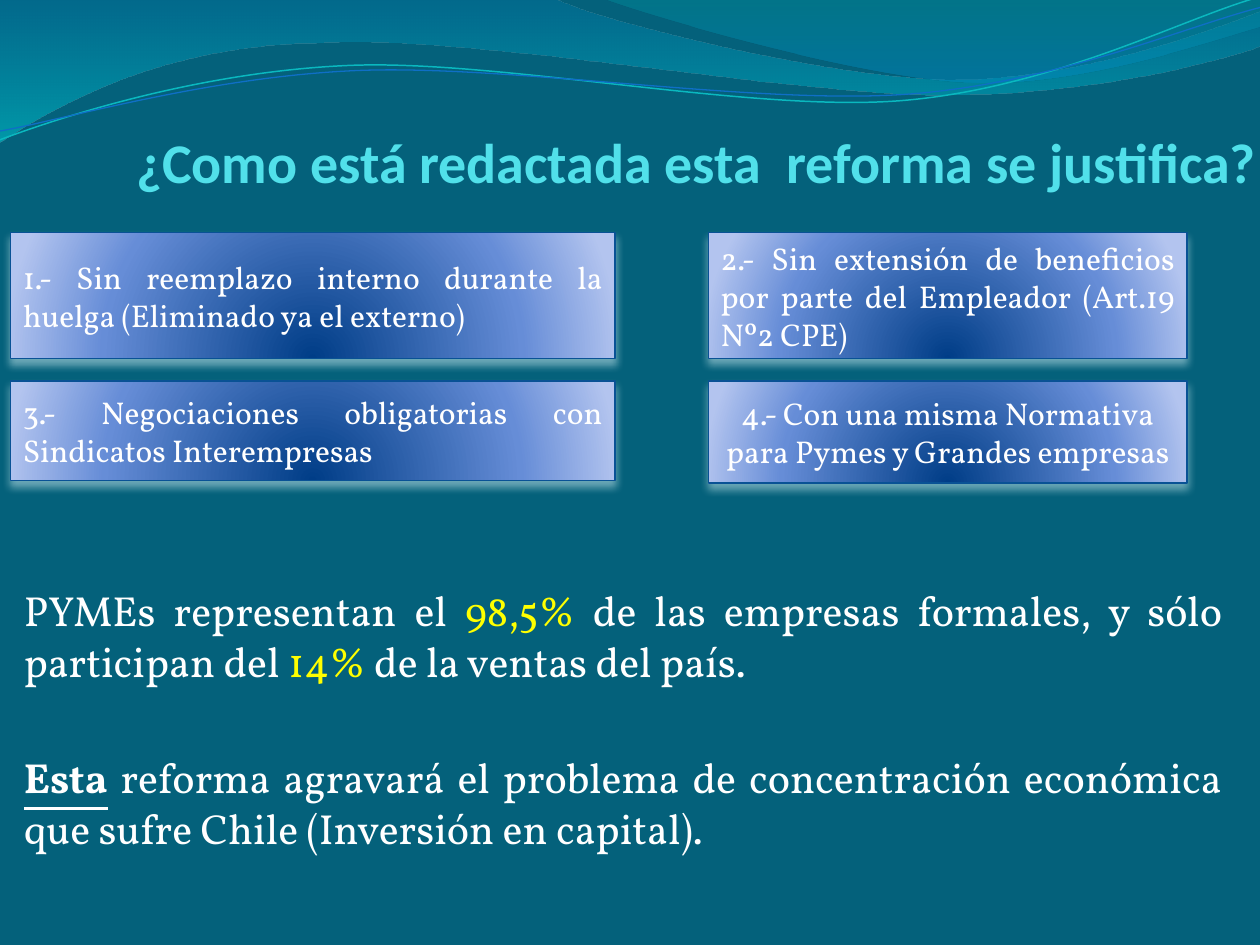
"""Build the slide that questions how the labour reform is justified."""
from dataclasses import dataclass
from math import cos, radians, sin
from typing import Optional

from lxml.etree import SubElement
from pptx import Presentation
from pptx.dml.color import RGBColor
from pptx.enum.shapes import MSO_SHAPE as Preset
from pptx.enum.text import MSO_ANCHOR as Anchor, PP_ALIGN as Align
from pptx.oxml import parse_xml
from pptx.oxml.ns import nsdecls, qn
from pptx.util import Cm, Pt

TEAL = RGBColor(0x04, 0x61, 0x7B)
AQUA = RGBColor(0x51, 0xE0, 0xEA)
WHITE = RGBColor(0xFF, 0xFF, 0xFF)
YELLOW = RGBColor(0xFF, 0xFF, 0x00)
BORDER = RGBColor(0x09, 0x52, 0x95)
GLOW = RGBColor(0xDB, 0xF5, 0xF9)
CYAN_LINE = RGBColor(0x0A, 0xB8, 0xBF)
BLUE_LINE = RGBColor(0x0F, 0x6F, 0xC6)
NAVY = RGBColor(0x00, 0x3D, 0x87)
MID_BLUE = RGBColor(0x66, 0x8D, 0xD7)
PALE_BLUE = RGBColor(0xB3, 0xC4, 0xEF)
WAVE_BLUE = RGBColor(0x00, 0x74, 0xA1)
WAVE_CYAN = RGBColor(0x00, 0xC6, 0xCF)
CREST_GREEN = RGBColor(0x00, 0xA1, 0xA9)
CREST_BLUE = RGBColor(0x00, 0x8B, 0xBF)

DOWNWARD = '<a:lin ang="5400000" scaled="1"/>'
FROM_BELOW = ('<a:path path="circle"><a:fillToRect l="50000" t="130000" '
              'r="50000" b="-30000"/></a:path>')
WAVE_UNIT = Cm(2.54) / 1000
TILT = -2.7
BODY_FONT = "Vollkorn"


@dataclass(frozen=True)
class Stop:
    position: int
    color: RGBColor
    opacity: int = 100


@dataclass(frozen=True)
class Wave:
    """Control points in hundredths of an inch, one or three to a segment."""
    start: tuple
    segments: tuple
    stops: tuple = ()
    line_color: Optional[RGBColor] = None
    line_width: float = 0
    pivot: Optional[tuple] = None


@dataclass(frozen=True)
class Card:
    column: tuple
    top: float
    height: float
    text: str
    align: Align = Align.JUSTIFY


@dataclass(frozen=True)
class Span:
    text: str
    color: RGBColor = WHITE
    bold: bool = False
    underline: bool = False


WAVES = (
    Wave((0, -1), (
        ((440, -1),),
        ((476, 17), (664, 63), (758, 63)),
        ((853, 63), (958, 26), (1000, 9)),
        ((1001, 36),),
        ((983, 44), (870, 76), (746, 75)),
        ((622, 75), (382, 28), (257, 34)),
        ((129, 35), (46, 83), (-1, 113)),
        ((0, -1),),
    ), stops=(Stop(0, WAVE_BLUE, 45), Stop(100, WAVE_CYAN, 55))),
    Wave((479, -1), (
        ((509, 11), (682, 62), (769, 65)),
        ((856, 69), (961, 32), (1000, 21)),
        ((1000, 0),),
        ((479, -1),),
    ), stops=(Stop(0, CREST_GREEN, 30), Stop(80, CREST_BLUE, 45))),
    Wave((0, 111), (
        ((48, 93), (158, 57), (277, 52)),
        ((395, 47), (593, 89), (713, 80)),
        ((833, 71), (938, 15), (998, -2)),
    ), line_color=CYAN_LINE, line_width=0.85, pivot=(499, 57.5)),
    Wave((0, 104), (
        ((47, 96), (164, 61), (283, 56)),
        ((403, 51), (597, 83), (717, 75)),
        ((836, 67), (941, 21), (1000, 6)),
    ), line_color=BLUE_LINE, line_width=0.75, pivot=(499.5, 59)),
)

LEFT_COLUMN, RIGHT_COLUMN = (0.21, 12.19), (14.28, 9.65)
UPPER_ROW, LOWER_ROW = 4.69, 7.68
CARDS = (
    Card(LEFT_COLUMN, UPPER_ROW, 2.54,
         "1.- Sin reemplazo interno durante la huelga (Eliminado ya el externo) "),
    Card(RIGHT_COLUMN, UPPER_ROW, 2.54,
         "2.- Sin extensión de beneficios por parte del Empleador (Art.19 Nº2 CPE)"),
    Card(LEFT_COLUMN, LOWER_ROW, 2.01,
         "3.- Negociaciones obligatorias con Sindicatos Interempresas"),
    Card(RIGHT_COLUMN, LOWER_ROW, 2.06,
         "4.- Con una misma Normativa para Pymes y Grandes empresas", Align.CENTER),
)
CARD_STOPS = (Stop(0, NAVY), Stop(68, MID_BLUE), Stop(100, PALE_BLUE))

TITLE = Span("¿Como está redactada esta  reforma se justifica?", AQUA, bold=True)
FIGURES = (
    Span("PYMEs representan el "),
    Span("98,5% ", YELLOW),
    Span("de las empresas formales, y sólo participan del "),
    Span("14% ", YELLOW),
    Span("de la ventas del país."),
)
CONCLUSION = (
    Span("Esta", bold=True, underline=True),
    Span(" reforma agravará el problema de concentración económica que sufre "
         "Chile (Inversión en capital)."),
)


def set_all(target: object, values: dict) -> None:
    for name, value in values.items():
        setattr(target, name, value)


def fill_gradient(shape, stops: tuple, direction: str) -> None:
    shape.fill.solid()
    marks = "".join(
        f'<a:gs pos="{stop.position * 1000}"><a:srgbClr val="{stop.color}">'
        f'<a:alpha val="{stop.opacity * 1000}"/></a:srgbClr></a:gs>' for stop in stops)
    gradient = parse_xml(f'<a:gradFill {nsdecls("a")} rotWithShape="1">'
                         f'<a:gsLst>{marks}</a:gsLst>{direction}</a:gradFill>')
    properties = shape.element.spPr
    properties.replace(properties.find(qn("a:solidFill")), gradient)


def add_glow(shape) -> None:
    shape.shadow.inherit = False
    shape.element.spPr.find(qn("a:effectLst")).append(parse_xml(
        f'<a:outerShdw {nsdecls("a")} blurRad="{Pt(4.5)}" dist="{Pt(3)}" dir="5400000" '
        f'rotWithShape="0"><a:srgbClr val="{GLOW}"><a:alpha val="48000"/></a:srgbClr>'
        '</a:outerShdw>'))


def level(point: tuple, pivot: Optional[tuple]) -> tuple:
    """Undo the tilt of a point and return it in thousandths of an inch."""
    x, y = point
    if pivot:
        angle, dx, dy = radians(-TILT), x - pivot[0], y - pivot[1]
        x = pivot[0] + dx * cos(angle) - dy * sin(angle)
        y = pivot[1] + dx * sin(angle) + dy * cos(angle)
    return 10 * x, 10 * y


def bend(shape, segments: tuple) -> None:
    """Join each three control points of an outline into one curve."""
    lines = iter(list(shape.element.iter(qn("a:lnTo"))))
    for segment in segments:
        steps = [next(lines) for _ in segment]
        if len(steps) == 3:
            curve = SubElement(steps[0].getparent(), qn("a:cubicBezTo"))
            steps[0].addprevious(curve)
            for step in steps:
                curve.append(step[0])
                step.getparent().remove(step)


def add_wave(page, wave: Wave) -> None:
    points = [level(point, wave.pivot) for segment in wave.segments for point in segment]
    builder = page.shapes.build_freeform(*level(wave.start, wave.pivot), scale=WAVE_UNIT)
    builder.add_line_segments(points, close=bool(wave.stops))
    shape = builder.convert_to_shape()
    bend(shape, wave.segments)
    shape.shadow.inherit = False
    if wave.stops:
        shape.line.fill.background()
        fill_gradient(shape, wave.stops, DOWNWARD)
    else:
        shape.fill.background()
        shape.line.color.rgb = wave.line_color
        shape.line.width = Pt(wave.line_width)
        shape.rotation = TILT


def write(para, spans: tuple, size: float, align: Align, font: str = BODY_FONT,
          before: float = 0) -> None:
    set_all(para, {"alignment": align, "space_before": Pt(before)})
    for span in spans:
        run = para.add_run()
        run.text = span.text
        set_all(run.font, {"name": font, "size": Pt(size), "bold": span.bold,
                           "underline": span.underline})
        run.font.color.rgb = span.color


def add_card(page, card: Card) -> None:
    left, width = card.column
    shape = page.shapes.add_shape(Preset.RECTANGLE, Cm(left), Cm(card.top),
                                  Cm(width), Cm(card.height))
    fill_gradient(shape, CARD_STOPS, FROM_BELOW)
    shape.line.color.rgb = BORDER
    shape.line.width = Pt(0.75)
    add_glow(shape)
    set_all(shape.text_frame, {"word_wrap": True, "vertical_anchor": Anchor.MIDDLE})
    write(shape.text_frame.paragraphs[0], (Span(card.text),), 18, card.align)


def add_text(page, bounds: tuple, anchor: Anchor, margin: float):
    box = page.shapes.add_textbox(*map(Cm, bounds))
    set_all(box.text_frame, {
        "word_wrap": True, "vertical_anchor": anchor, "margin_left": 0,
        "margin_right": Cm(0.05), "margin_top": Cm(margin), "margin_bottom": Cm(margin)})
    return box.text_frame


def main() -> None:
    deck = Presentation()
    set_all(deck, {"slide_width": Cm(25.4), "slide_height": Cm(19.05)})
    page = deck.slides.add_slide(deck.slide_layouts[6])
    page.background.fill.solid()
    page.background.fill.fore_color.rgb = TEAL
    for wave in WAVES:
        add_wave(page, wave)
    title = add_text(page, (1.47, 1.68, 23.93, 2.24), Anchor.BOTTOM, 0)
    write(title.paragraphs[0], (TITLE,), 32, Align.RIGHT, "Calibri")
    body = add_text(page, (0.48, 11.66, 24.21, 5.99), Anchor.TOP, 0.13)
    write(body.paragraphs[0], FIGURES, 24, Align.JUSTIFY, before=4.8)
    write(body.add_paragraph(), CONCLUSION, 24, Align.JUSTIFY, before=37.7)
    for card in CARDS:
        add_card(page, card)
    deck.save("out.pptx")


if __name__ == "__main__":
    main()
